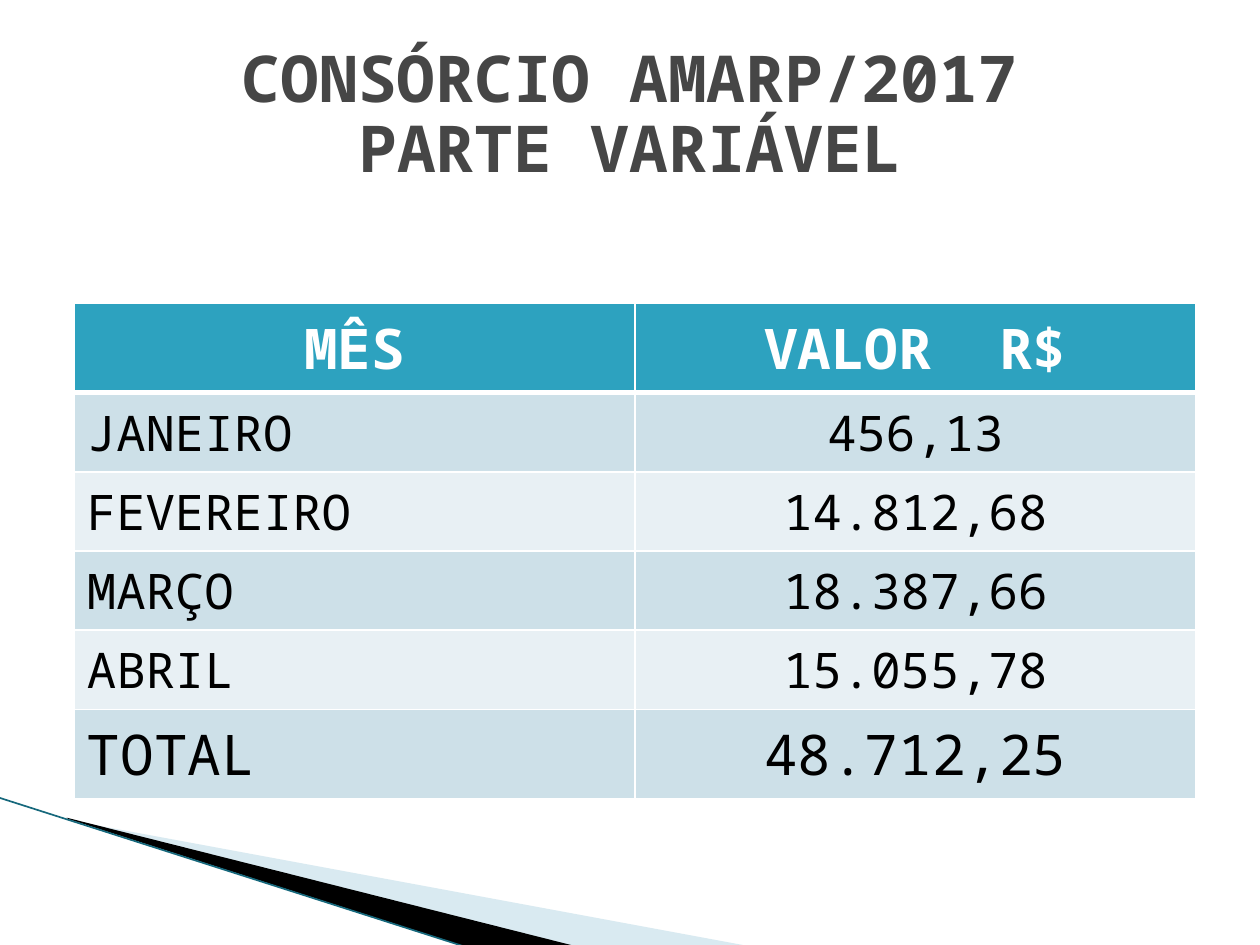
from lxml import etree
from pptx import Presentation
from pptx.dml.color import RGBColor
from pptx.enum.shapes import MSO_CONNECTOR
from pptx.enum.text import MSO_ANCHOR, PP_ALIGN
from pptx.oxml.ns import qn
from pptx.util import Inches, Pt

CENTER, LEFT = PP_ALIGN.CENTER, PP_ALIGN.LEFT
MIDDLE = MSO_ANCHOR.MIDDLE
STRAIGHT = MSO_CONNECTOR.STRAIGHT


def rgb(code):
    return RGBColor.from_string(code)


class Deck:
    font = "Noto Sans Mono"
    white, black, gray = "FFFFFF", "000000", "464646"
    head, bands = "2DA2BF", ("CDE0E8", "E8F0F4")
    pale, teal = "A0CBDC", "16687C"

    def __init__(self):
        self.prs = Presentation()
        self.prs.slide_width, self.prs.slide_height = Inches(10), Inches(7.5)
        self.slide = self.prs.slides.add_slide(self.prs.slide_layouts[6])

    def run(self, para, text, size, color, bold=False):
        run = para.add_run()
        run.text = text
        font = run.font
        font.name, font.size, font.bold = self.font, Pt(size), bold
        font.color.rgb = rgb(color)

    def wedge(self, points, color, alpha=None):
        """Draw a filled polygon; alpha is its opacity in percent."""
        points = [(Inches(x), Inches(y)) for x, y in points]
        form = self.slide.shapes.build_freeform(*points[0])
        form.add_line_segments(points[1:])
        shape = form.convert_to_shape()
        shape.shadow.inherit = False
        shape.line.fill.background()
        shape.fill.solid()
        shape.fill.fore_color.rgb = rgb(color)
        if alpha:
            tint = shape.fill._xPr.find(".//" + qn("a:srgbClr"))
            etree.SubElement(tint, qn("a:alpha"), val=str(alpha * 1000))

    def line(self, x1, y1, x2, y2, color, width):
        line = self.slide.shapes.add_connector(
            STRAIGHT, Inches(x1), Inches(y1), Inches(x2), Inches(y2))
        line.line.color.rgb = rgb(color)
        line.line.width = Pt(width)
        etree.SubElement(line._element.spPr, qn("a:effectLst"))

    def title(self, lines, x, y, w, h, size):
        box = self.slide.shapes.add_textbox(
            Inches(x), Inches(y), Inches(w), Inches(h))
        frame = box.text_frame
        frame.word_wrap = True
        frame.vertical_anchor = MIDDLE
        para = frame.paragraphs[0]
        para.alignment = CENTER
        para.line_spacing = 0.9
        for i, text in enumerate(lines):
            if i:
                para.add_line_break()
            self.run(para, text, size, self.gray, True)

    def edges(self, cell, base):
        """Give a cell white borders, with the bottom one base points wide."""
        props = cell._tc.get_or_add_tcPr()
        for i, (side, width) in enumerate(
                (("L", 1), ("R", 1), ("T", 1), ("B", base))):
            edge = etree.Element(qn("a:ln" + side), w=str(Pt(width)))
            fill = etree.SubElement(edge, qn("a:solidFill"))
            etree.SubElement(fill, qn("a:srgbClr"), val=self.white)
            props.insert(i, edge)

    def table(self, rows, x, y, w, high):
        frame = self.slide.shapes.add_table(
            len(rows), len(rows[0]), Inches(x), Inches(y),
            Inches(w), Inches(high * len(rows)))
        table = frame.table
        last = len(rows) - 1
        for r, row in enumerate(rows):
            top = r == 0
            for c, text in enumerate(row):
                cell = table.cell(r, c)
                cell.fill.solid()
                cell.fill.fore_color.rgb = rgb(
                    self.head if top else self.bands[(r - 1) % 2])
                self.edges(cell, 3 if top else 1)
                para = cell.text_frame.paragraphs[0]
                para.alignment = CENTER if top or c else LEFT
                self.run(para, text, 32 if r in (0, last) else 28,
                         self.white if top else self.black, top)


def main():
    deck = Deck()
    deck.wedge([(0.55, 6.51), (5.95, 7.51), (4.56, 7.51), (0.55, 6.5)],
               deck.pale, 40)
    deck.wedge([(0.53, 6.49), (4.57, 7.51), (3.72, 7.52), (0.54, 6.5)],
               deck.black)
    deck.line(-0.01, 6.33, 3.71, 7.52, deck.teal, 0.95)
    deck.table([
        ("MÊS", "VALOR  R$"),
        ("JANEIRO", "456,13"),
        ("FEVEREIRO", "14.812,68"),
        ("MARÇO", "18.387,66"),
        ("ABRIL", "15.055,78"),
        ("TOTAL", "48.712,25"),
    ], 0.59, 2.41, 8.9, 0.51)
    deck.title(["CONSÓRCIO AMARP/2017", "PARTE VARIÁVEL"],
               0.5, 0.3, 9, 1.25, 36.9)
    deck.prs.save("out.pptx")


if __name__ == "__main__":
    main()
